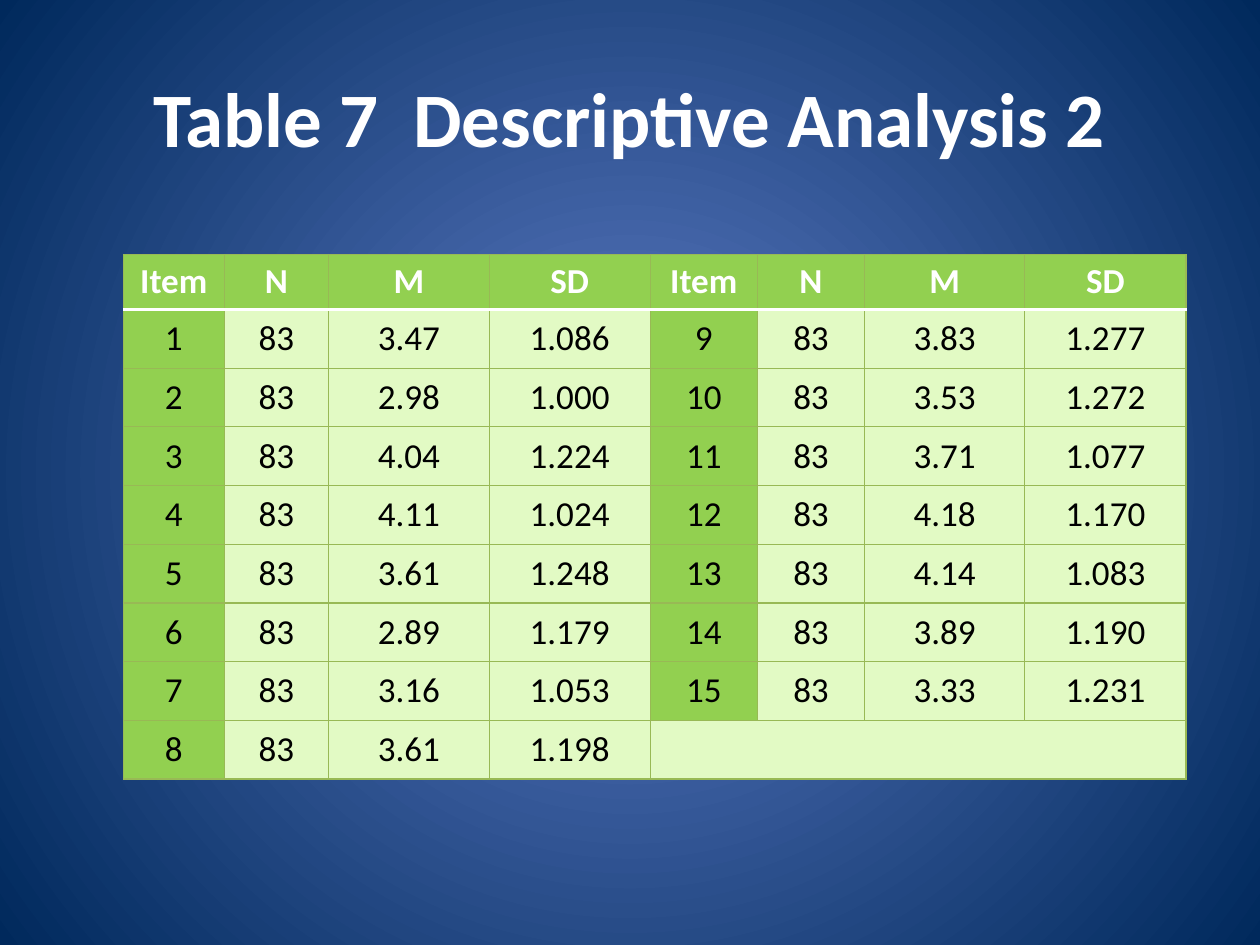
import lxml.etree
import pptx
import pptx.dml.color
import pptx.enum.text
import pptx.oxml.ns
import pptx.util
from pptx.util import Cm

COLORS = {
    "center": "5E7CC5", "edge": "00295C", "white": "FFFFFF", "black": "000000",
    "green": "92D050", "pale": "E2FAC4", "border": "98B955",
}
HEADER = ["Item", "N", "M", "SD"]
SAMPLE_SIZE = "83"
STATISTICS = [
    ("3.47", "1.086"), ("2.98", "1.000"), ("4.04", "1.224"), ("4.11", "1.024"),
    ("3.61", "1.248"), ("2.89", "1.179"), ("3.16", "1.053"), ("3.61", "1.198"),
    ("3.83", "1.277"), ("3.53", "1.272"), ("3.71", "1.077"), ("4.18", "1.170"),
    ("4.14", "1.083"), ("3.89", "1.190"), ("3.33", "1.231"),
]
ITEMS_PER_BLOCK = 8
COLUMN_WIDTHS = [2.03, 2.11, 3.23, 3.25, 2.16, 2.16, 3.23, 3.25]
TABLE_HEIGHT, HEADER_HEIGHT = 10.58, 1.11


class SlideBuilder:
    """Holds the text style and the current slide, and draws its elements."""

    def __init__(self, slide, font_name="Calibri"):
        self.slide = slide
        self.font_name = font_name

    def color(self, name):
        return pptx.dml.color.RGBColor.from_string(COLORS[name])

    def child(self, parent, tag, **attributes):
        return lxml.etree.SubElement(parent, pptx.oxml.ns.qn(tag), **attributes)

    def background(self, center, edge):
        fill = self.slide.background.fill
        fill.gradient()
        for stop, name, position in zip(fill.gradient_stops, (center, edge), (0, 1)):
            stop.color.rgb = self.color(name)
            stop.position = position
        gradient = self.slide.element.find(".//" + pptx.oxml.ns.qn("a:gradFill"))
        gradient.remove(gradient.find(pptx.oxml.ns.qn("a:lin")))
        circle = self.child(gradient, "a:path", path="circle")
        self.child(circle, "a:fillToRect", l="50000", t="50000", r="50000", b="50000")

    def text(self, paragraph, text, size, color, bold):
        paragraph.text = text
        paragraph.alignment = pptx.enum.text.PP_ALIGN.CENTER
        font = paragraph.font
        font.name = self.font_name
        font.size = pptx.util.Pt(size)
        font.bold = bold
        font.color.rgb = self.color(color)

    def title(self, text, left, top, width, height):
        shape = self.slide.shapes.add_textbox(Cm(left), Cm(top), Cm(width), Cm(height))
        frame = shape.text_frame
        frame.word_wrap = True
        frame.vertical_anchor = pptx.enum.text.MSO_ANCHOR.MIDDLE
        self.text(frame.paragraphs[0], text, 44, "white", True)

    def border(self, cell, side, color, width):
        properties = cell._tc.get_or_add_tcPr()
        line = self.child(properties, f"a:ln{side}", w=str(pptx.util.Pt(width)))
        solid = self.child(line, "a:solidFill")
        self.child(solid, "a:srgbClr", val=COLORS[color])

    def cell(self, cell, text, row, column):
        is_header = row == 0
        is_item = column % len(HEADER) == 0 and text != ""
        cell.margin_left = cell.margin_right = Cm(0.18)
        cell.margin_top = cell.margin_bottom = 0
        cell.vertical_anchor = pptx.enum.text.MSO_ANCHOR.MIDDLE
        for side in "LRTB":
            if (row, side) in ((0, "B"), (1, "T")):
                self.border(cell, side, "white", 2)
            else:
                self.border(cell, side, "border", 0.75)
        cell.fill.solid()
        cell.fill.fore_color.rgb = self.color("green" if is_header or is_item else "pale")
        text_color = "white" if is_header else "black"
        self.text(cell.text_frame.paragraphs[0], text, 20, text_color, is_header)

    def table(self, rows, left, top, widths, height, header_height):
        table = self.slide.shapes.add_table(
            len(rows), len(widths), Cm(left), Cm(top), Cm(sum(widths)), Cm(height)
        ).table
        table.first_row = table.horz_banding = False
        for column, width in zip(table.columns, widths):
            column.width = Cm(width)
        body_height = (height - header_height) / (len(rows) - 1)
        for row_index, values in enumerate(rows):
            table.rows[row_index].height = Cm(body_height if row_index else header_height)
            for column_index, text in enumerate(values):
                self.cell(table.cell(row_index, column_index), text, row_index, column_index)
        return table


def table_rows():
    items = [[str(number), SAMPLE_SIZE, mean, deviation]
             for number, (mean, deviation) in enumerate(STATISTICS, 1)]
    left_block = items[:ITEMS_PER_BLOCK]
    right_block = items[ITEMS_PER_BLOCK:] + [[""] * len(HEADER)]
    return [HEADER * 2] + [left + right for left, right in zip(left_block, right_block)]


def main():
    presentation = pptx.Presentation()
    presentation.slide_width = Cm(25.4)
    presentation.slide_height = Cm(19.05)
    builder = SlideBuilder(presentation.slides.add_slide(presentation.slide_layouts[6]))
    builder.background("center", "edge")
    builder.title("Table 7  Descriptive Analysis 2", 1.27, 0.76, 22.86, 3.18)
    table = builder.table(table_rows(), 2.49, 5.13, COLUMN_WIDTHS, TABLE_HEIGHT, HEADER_HEIGHT)
    table.cell(ITEMS_PER_BLOCK, len(HEADER)).merge(
        table.cell(ITEMS_PER_BLOCK, len(COLUMN_WIDTHS) - 1))
    presentation.save("out.pptx")


if __name__ == "__main__":
    main()
